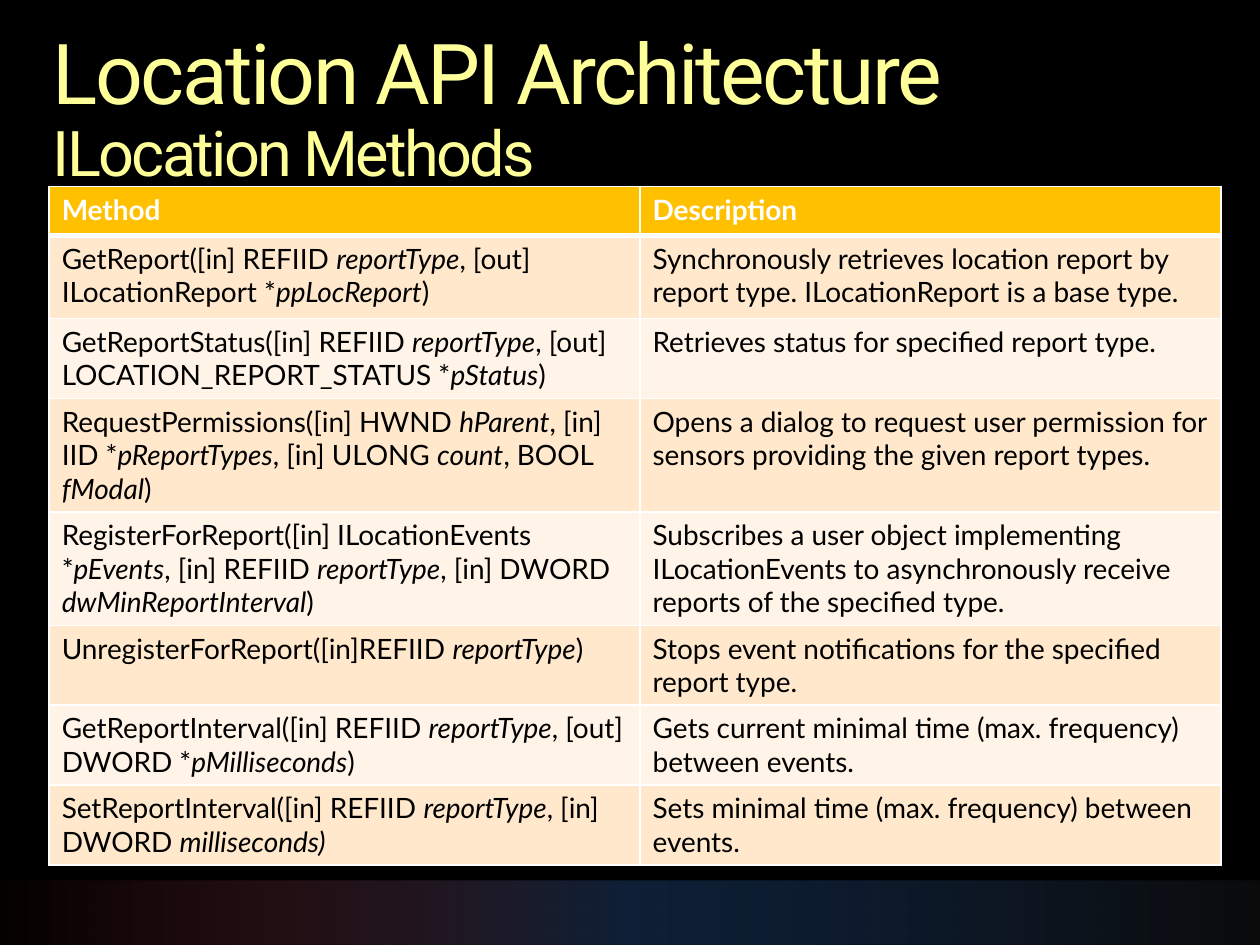
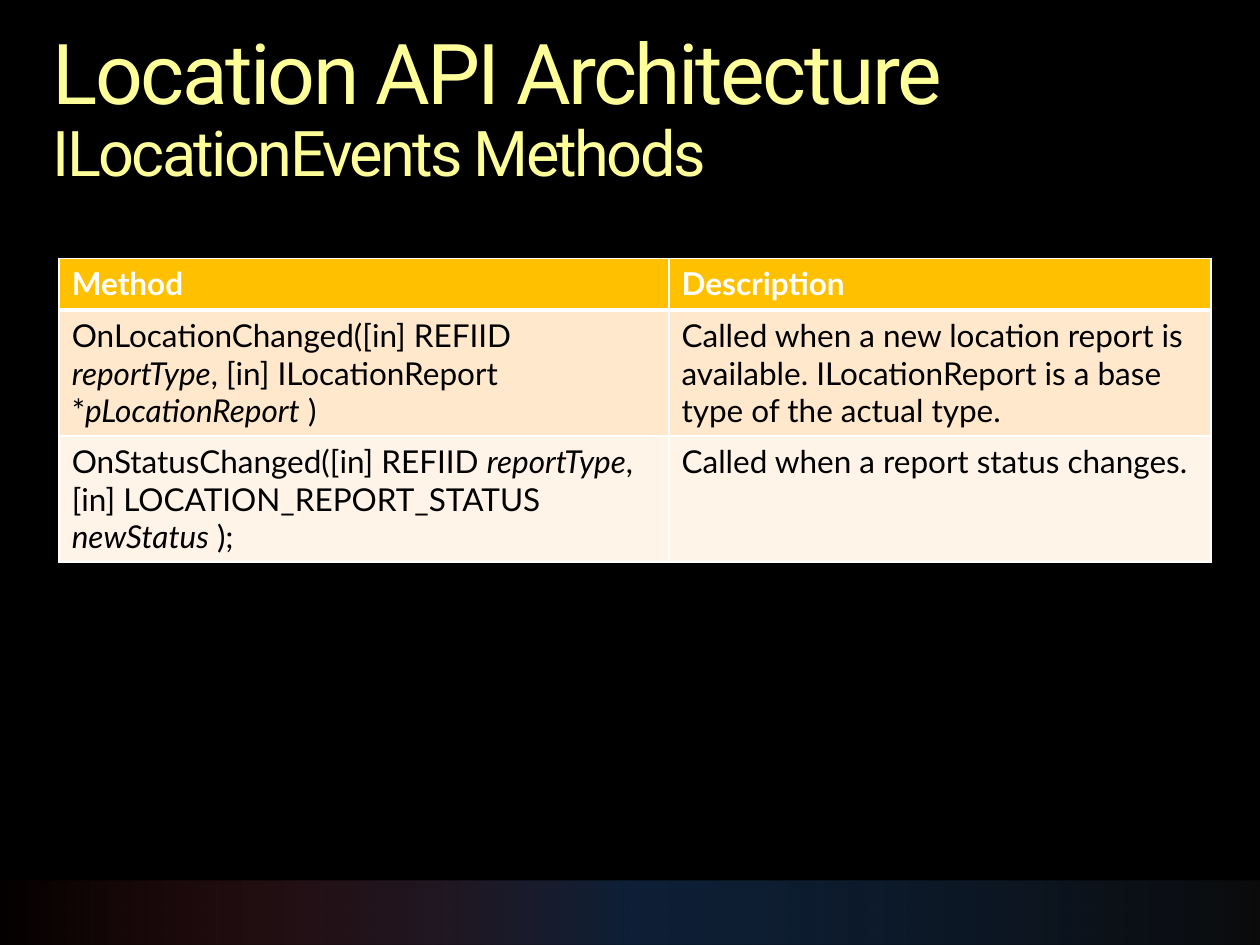
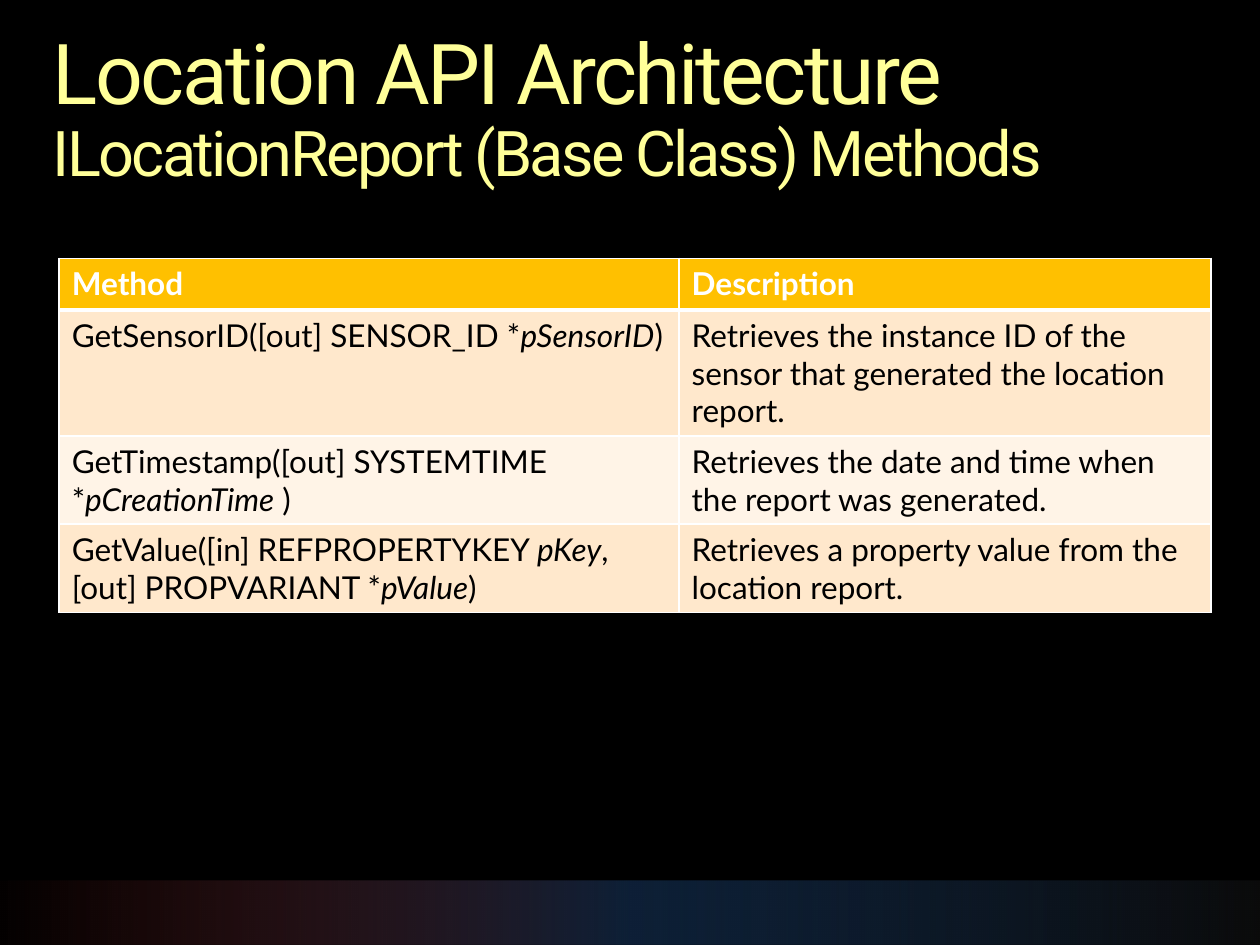
from lxml import etree
from pptx import Presentation
from pptx.dml.color import RGBColor
from pptx.enum.shapes import MSO_SHAPE
from pptx.enum.text import MSO_ANCHOR, MSO_AUTO_SIZE, PP_ALIGN
from pptx.oxml.ns import qn
from pptx.util import Inches, Pt

BLACK = RGBColor(0x00, 0x00, 0x00)
WHITE = RGBColor(0xFF, 0xFF, 0xFF)
GOLD = RGBColor(0xFF, 0xC0, 0x00)
STRIPES = RGBColor(0xFF, 0xE8, 0xCC), RGBColor(0xFF, 0xF4, 0xE7)

# Gradient stops: position %, colour, opacity %
BAND_STOPS = [
    (0, RGBColor(0x0D, 0x0D, 0x0D), 86),
    (50, RGBColor(0x17, 0x37, 0x5E), 58),
    (100, RGBColor(0xCE, 0x3B, 0x37), 1),
]
TITLE_STOPS = [
    (0, RGBColor(0xFF, 0xFF, 0xB9), 100),
    (36, RGBColor(0xFF, 0xFF, 0x99), 100),
    (86, RGBColor(0xF6, 0xAE, 0x1E), 100),
]
TITLE_FONT, TABLE_FONT = "Roboto", "Lato"
TITLE = "Location API Architecture"
HEADER = ("Method", "Description")
HEADER_BORDERS = {"L": 1, "R": 1, "T": 1, "B": 3}

# Text between bars is italic.
SLIDES = [
    {
        "subtitle": "ILocation Methods",
        "at": (0.39, 1.48), "cols": (4.69, 4.61), "size": 16,
        "heights": (0.39, 0.66, 0.61, 0.86, 0.86, 0.61, 0.61, 0.61),
        "rows": [
            ("GetReport([in] REFIID |reportType|, [out] ILocationReport *|ppLocReport|)",
             "Synchronously retrieves location report by report type. "
             "ILocationReport is a base type."),
            ("GetReportStatus([in] REFIID |reportType|, [out] LOCATION_REPORT_STATUS *|pStatus|)",
             "Retrieves status for specified report type."),
            ("RequestPermissions([in] HWND |hParent|, [in] IID *|pReportTypes|, "
             "[in] ULONG |count|, BOOL |fModal|)",
             "Opens a dialog to request user permission for sensors "
             "providing the given report types."),
            ("RegisterForReport([in] ILocationEvents *|pEvents|, [in] REFIID |reportType|, "
             "[in] DWORD |dwMinReportInterval|)",
             "Subscribes a user object implementing ILocationEvents to "
             "asynchronously receive reports of the specified type."),
            ("UnregisterForReport([in]REFIID |reportType|)",
             "Stops event notifications for the specified report type."),
            ("GetReportInterval([in] REFIID |reportType|, [out] DWORD *|pMilliseconds|)",
             "Gets current minimal time (max. frequency) between events."),
            ("SetReportInterval([in] REFIID |reportType|, [in] DWORD |milliseconds)|",
             "Sets minimal time (max. frequency) between events."),
        ],
    },
    {
        "subtitle": "ILocationEvents Methods",
        "at": (0.47, 2.05), "cols": (4.84, 4.3), "size": 18,
        "heights": (0.41,) * 3,
        "rows": [
            ("OnLocationChanged([in] REFIID |reportType|, [in] ILocationReport *|pLocationReport| )",
             "Called when a new location report is available. "
             "ILocationReport is a base type of the actual type."),
            ("OnStatusChanged([in] REFIID |reportType|, [in] LOCATION_REPORT_STATUS |newStatus| );",
             "Called when a report status changes."),
        ],
    },
    {
        "subtitle": "ILocationReport (Base Class) Methods",
        "at": (0.47, 2.05), "cols": (4.92, 4.22), "size": 18,
        "heights": (0.41,) * 4,
        "rows": [
            ("GetSensorID([out] SENSOR_ID *|pSensorID|)",
             "Retrieves the instance ID of the sensor that generated the location report."),
            ("GetTimestamp([out] SYSTEMTIME *|pCreationTime| )",
             "Retrieves the date and time when the report was generated."),
            ("GetValue([in] REFPROPERTYKEY |pKey|, [out] PROPVARIANT *|pValue|)",
             "Retrieves a property value from the location report."),
        ],
    },
]


def set_gradient(fill, props, stops, angle):
    """Give fill, whose XML parent is props, the stops at a clockwise angle."""
    fill.gradient()
    grad = props.find(qn("a:gradFill"))
    for child in list(grad):
        grad.remove(child)
    gs_list = etree.SubElement(grad, qn("a:gsLst"))
    for position, color, opacity in stops:
        gs = etree.SubElement(gs_list, qn("a:gs"), pos=str(position * 1000))
        clr = etree.SubElement(gs, qn("a:srgbClr"), val=str(color))
        if opacity < 100:
            etree.SubElement(clr, qn("a:alpha"), val=str(opacity * 1000))
    etree.SubElement(grad, qn("a:lin"), ang=str(angle * 60000), scaled="0")


def add_footer_band(s, width, height):
    """Draw the band along the foot of the slide, behind everything else."""
    top = Inches(6.99)
    band = s.shapes.add_shape(MSO_SHAPE.RECTANGLE, 0, top, width, height - top)
    band.shadow.inherit = False
    band.line.fill.background()
    set_gradient(band.fill, band.element.spPr, BAND_STOPS, 180)
    s.shapes.title.element.addprevious(band.element)


def add_title(s, subtitle):
    sp = s.shapes.title
    sp.left, sp.top, sp.width, sp.height = map(Inches, (0.42, 0.25, 9.17, 1.27))
    tf = sp.text_frame
    tf.margin_left = tf.margin_top = tf.margin_right = tf.margin_bottom = 0
    tf.vertical_anchor = MSO_ANCHOR.TOP
    tf.word_wrap = True
    tf.auto_size = MSO_AUTO_SIZE.SHAPE_TO_FIT_TEXT
    p = tf.paragraphs[0]
    p.alignment = PP_ALIGN.LEFT
    p.line_spacing = 0.9
    for text, size in ((TITLE, 48), (subtitle, 36)):
        if p.runs:
            p.add_line_break()
        r = p.add_run()
        r.text = text
        r.font.size = Pt(size)
        r.font.name = TITLE_FONT
        props = r._r.get_or_add_rPr()
        props.set("spc", "-150")
        set_gradient(r.font.fill, props, TITLE_STOPS, 90)


def set_header_borders(cell):
    props = cell._tc.get_or_add_tcPr()
    for side, width in HEADER_BORDERS.items():
        ln = etree.SubElement(props, qn(f"a:ln{side}"), w=str(Pt(width)))
        solid = etree.SubElement(ln, qn("a:solidFill"))
        etree.SubElement(solid, qn("a:srgbClr"), val=str(WHITE))


def fill_cell(cell, text, row, size):
    if row == 0:
        set_header_borders(cell)
    cell.fill.solid()
    cell.fill.fore_color.rgb = STRIPES[(row - 1) % 2] if row else GOLD
    p = cell.text_frame.paragraphs[0]
    p.font.size = Pt(size)
    p.font.name = TABLE_FONT
    p.font.bold = row == 0
    p.font.color.rgb = BLACK if row else WHITE
    for i, piece in enumerate(text.split("|")):
        if piece:
            r = p.add_run()
            r.text = piece
            if i % 2:
                r.font.italic = True


def add_method_table(s, at, cols, heights, size, rows):
    rows = [HEADER, *rows]
    left, top = map(Inches, at)
    table = s.shapes.add_table(len(rows), len(cols), left, top,
                               Inches(sum(cols)), Inches(sum(heights))).table
    for column, width in zip(table.columns, cols):
        column.width = Inches(width)
    for i, (texts, height) in enumerate(zip(rows, heights)):
        table.rows[i].height = Inches(height)
        for j, text in enumerate(texts):
            fill_cell(table.cell(i, j), text, i, size)


def main():
    prs = Presentation()
    prs.slide_width, prs.slide_height = Inches(10), Inches(7.5)
    background = prs.slide_master.background.fill
    background.solid()
    background.fore_color.rgb = BLACK
    title_only = prs.slide_layouts[5]
    for content in SLIDES:
        s = prs.slides.add_slide(title_only)
        add_footer_band(s, prs.slide_width, prs.slide_height)
        add_title(s, content["subtitle"])
        add_method_table(s, content["at"], content["cols"], content["heights"],
                         content["size"], content["rows"])
    prs.save("out.pptx")


if __name__ == "__main__":
    main()
